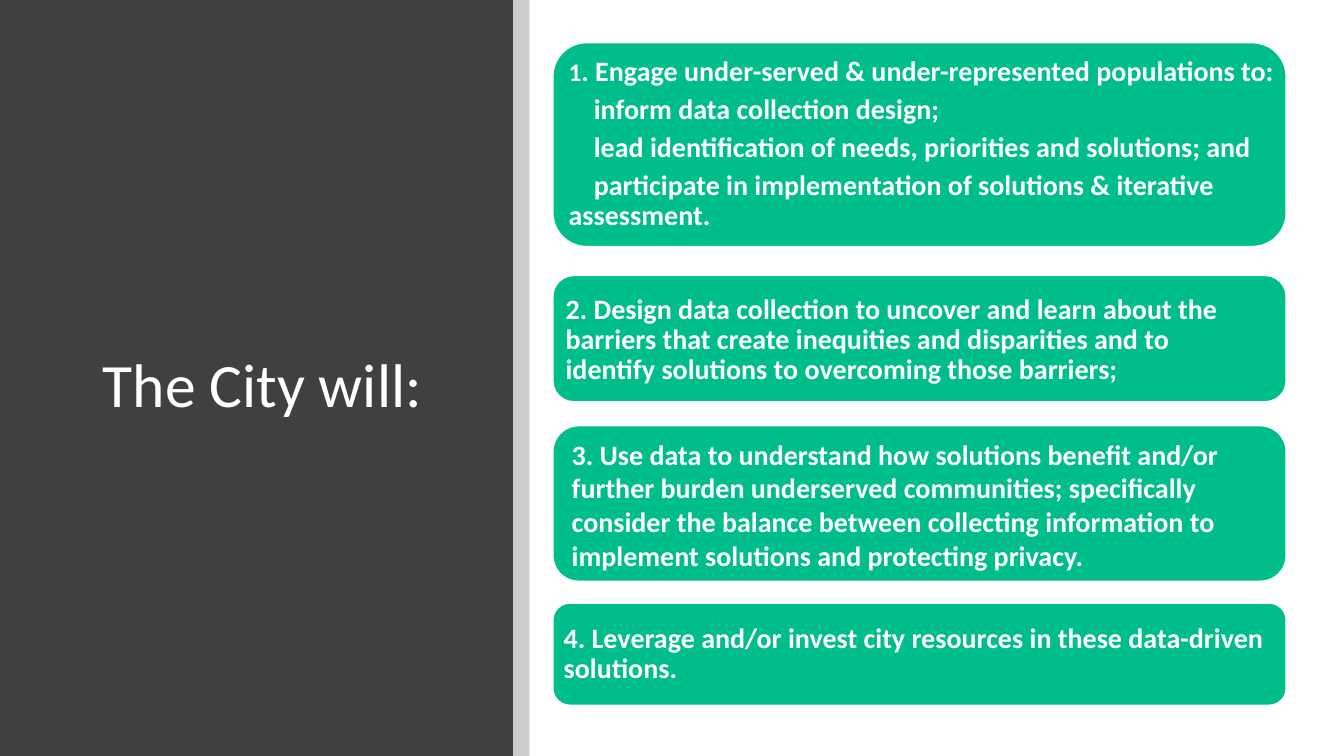
"""Build the slide listing what the City will do with data."""
from pptx import Presentation, util as u
from pptx.dml import color
from pptx.enum import shapes, text

PX = 9144
WHITE, GREEN = "FFFFFF", "00BE8C"

presentation = Presentation()
presentation.slide_width, presentation.slide_height = 1333 * PX, 750 * PX
slide = presentation.slides.add_slide(presentation.slide_layouts[6])


def add_box(kind, left, top, width, height, fill, line=None):
    shape = slide.shapes.add_shape(kind, left * PX, top * PX, width * PX, height * PX)
    shape.shadow.inherit = False
    shape.fill.solid()
    shape.fill.fore_color.rgb = color.RGBColor.from_string(fill)
    if line:
        shape.line.color.rgb = color.RGBColor.from_string(line)
        shape.line.width = u.Pt(1.5)
    else:
        shape.line.fill.background()
    return shape


def add_text(paragraphs, left, top, width, height, size=20, bold=True, spacing=0.9,
             inset=(7, 7), indent=0, lead_size=None):
    box = slide.shapes.add_textbox(left * PX, top * PX, width * PX, height * PX)
    frame = box.text_frame
    frame.word_wrap = True
    frame.vertical_anchor = text.MSO_ANCHOR.MIDDLE
    frame.margin_left = frame.margin_right = inset[0] * PX
    frame.margin_top = frame.margin_bottom = inset[1] * PX
    for index, content in enumerate(paragraphs):
        paragraph = frame.paragraphs[0] if index == 0 else frame.add_paragraph()
        paragraph.line_spacing = spacing
        if index:
            paragraph.space_before = u.Pt(5.6)
            paragraph._p.get_or_add_pPr().set("indent", str(indent * PX))
        for number, line in enumerate(content.split("\v")):
            if number:
                paragraph.add_line_break()
            split = 1 if lead_size and index == number == 0 else 0
            for part, points in ((line[:split], lead_size), (line[split:], size)):
                if part:
                    run = paragraph.add_run()
                    run.text = part
                    run.font.name = "Calibri"
                    run.font.size = u.Pt(points)
                    run.font.bold = bold
                    run.font.color.rgb = color.RGBColor.from_string(WHITE)


add_box(shapes.MSO_SHAPE.RECTANGLE, 0, 0, 509, 750, "404040")
add_box(shapes.MSO_SHAPE.RECTANGLE, 509, 0, 16, 750, "CCCCCC")
add_text(["The City will:"], 92, 89, 365, 591, size=44, bold=False, inset=(10, 5))

commitments = [
    (42, 203, (557, 52, 719, 183), {"indent": 25, "lead_size": 18}, [
        "1. Engage under-served & under-represented populations to:",
        "inform data collection design;",
        "lead identification of needs, priorities and solutions; and",
        "participate in implementation of solutions & iterative\vassessment."]),
    (273, 126, (554, 281, 717, 114), {}, [
        "2. Design data collection to uncover and learn about the\v"
        "barriers that create inequities and disparities and to\v"
        "identify solutions to overcoming those barriers;"]),
    (422, 155, (560, 430, 717, 141), {"spacing": 1.0}, [
        "3. Use data to understand how solutions benefit and/or\v"
        "further burden underserved communities; specifically\v"
        "consider the balance between collecting information to\v"
        "implement solutions and protecting privacy."]),
    (598, 102, (552, 603, 719, 92), {}, [
        "4. Leverage and/or invest city resources in these data-driven\vsolutions."]),
]
for top, height, text_area, layout, paragraphs in commitments:
    add_box(shapes.MSO_SHAPE.ROUNDED_RECTANGLE, 548, top, 728, height, GREEN, WHITE)
    add_text(paragraphs, *text_area, **layout)

presentation.save("out.pptx")
